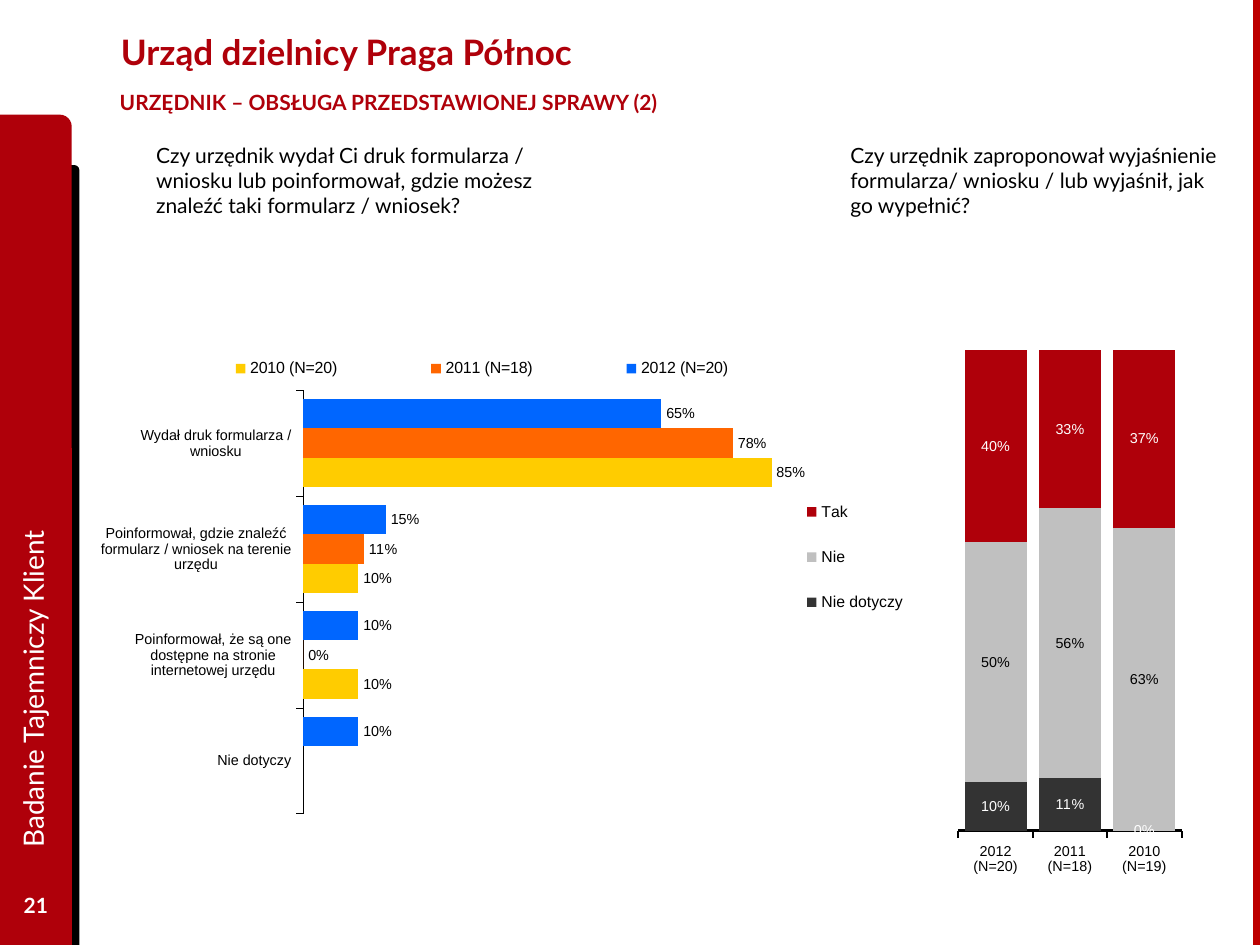
"""Build the mystery-shopper survey slide with two charts."""
from dataclasses import dataclass
from typing import Any, Optional

from lxml import etree
from pptx import Presentation
from pptx.chart import data as chart_data
from pptx.dml.color import RGBColor
from pptx.enum import chart as charts, shapes, text
from pptx.util import Pt

RED, BLACK, WHITE = "AF000A", "000000", "FFFFFF"
CHART_NS = "http://schemas.openxmlformats.org/drawingml/2006/chart"
Area = tuple[float, float, float, float]


@dataclass(frozen=True)
class Panel:
    area: Area
    fill: str
    preset: Any = shapes.MSO_SHAPE.ROUND_1_RECTANGLE


@dataclass(frozen=True)
class Label:
    words: str
    area: Area
    size: float = 12
    color: str = BLACK
    bold: bool = False
    rotation: float = 0
    anchor: Any = text.MSO_ANCHOR.TOP
    align: Any = text.PP_ALIGN.LEFT
    side_inset: float = 7.2
    wrap: bool = True


@dataclass(frozen=True)
class Series:
    name: str
    values: tuple[Optional[float], ...]
    fill: str
    label_color: str = BLACK


@dataclass(frozen=True)
class SurveyChart:
    kind: Any
    area: Area
    categories: tuple[str, ...]
    series: tuple[Series, ...]
    size: float
    legend_size: float
    legend_side: Any
    legend_area: Area
    plot_area: Area
    gap: int
    axis_width: float
    label_position: Any
    reverse: bool = False


PANELS = (
    Panel((28.08, 94.32, 17.28, 445.68), BLACK),
    Panel((0, 65.52, 41.04, 474.48), RED),
    Panel((716, 0, 4, 540), "BD0000", shapes.MSO_SHAPE.RECTANGLE),
)
TITLE = Label("Urząd dzielnicy Praga Północ", (61.92, 3.6, 559.44, 51.84), 20, RED, True,
              anchor=text.MSO_ANCHOR.MIDDLE)
LABELS = (
    Label("Badanie Tajemniczy Klient", (-188.64, 265.68, 414.72, 36.72), 16, WHITE,
          rotation=270, anchor=text.MSO_ANCHOR.MIDDLE),
    Label("21", (0, 502.56, 41.04, 28.8), 12, WHITE, True,
          anchor=text.MSO_ANCHOR.MIDDLE, align=text.PP_ALIGN.CENTER),
    Label("URZĘDNIK – OBSŁUGA PRZEDSTAWIONEJ SPRAWY (2)", (54, 47.52, 277.2, 23.76),
          12, RED, True, side_inset=14.4, wrap=False),
    Label("Czy urzędnik zaproponował wyjaśnienie formularza/ wniosku / lub wyjaśnił, "
          "jak go wypełnić?", (478.8, 77.76, 226.8, 51.12)),
    Label("Czy urzędnik wydał Ci druk formularza / wniosku lub poinformował, gdzie możesz "
          "znaleźć taki formularz / wniosek?", (82.08, 77.76, 265.68, 51.12)),
)
CHARTS = (
    SurveyChart(
        charts.XL_CHART_TYPE.COLUMN_STACKED_100, (445.68, 179.28, 231.84, 343.44),
        ("2012 (N=20)", "2011 (N=18)", "2010 (N=19)"),
        (Series("Nie dotyczy", (0.1, 0.11, 0), "333333", WHITE),
         Series("Nie", (0.5, 0.56, 0.63), "C0C0C0"),
         Series("Tak", (0.4, 0.33, 0.37), RED, WHITE)),
        8.2, 9, charts.XL_LEGEND_POSITION.LEFT, (0.05, 0.27, 0.27, 0.27),
        (0.44, 0.06, 0.55, 0.8), 20, 1.17, charts.XL_LABEL_POSITION.CENTER),
    SurveyChart(
        charts.XL_CHART_TYPE.BAR_CLUSTERED, (57.6, 192.96, 430.56, 272.16),
        ("Wydał druk formularza / wniosku",
         "Poinformował, gdzie znaleźć formularz / wniosek na terenie urzędu",
         "Poinformował, że są one dostępne na stronie internetowej urzędu",
         "Nie dotyczy"),
        (Series("2012 (N=20)", (0.65, 0.15, 0.1, 0.1), "0066FF"),
         Series("2011 (N=18)", (0.78, 0.11, 0, None), "FF6600"),
         Series("2010 (N=20)", (0.85, 0.1, 0.1, None), "FFCC00")),
        8.3, 9.2, charts.XL_LEGEND_POSITION.RIGHT, (0.05, 0.03, 0.9, 0.07),
        (0.26, 0.11, 0.74, 0.89), 60, 0.25, charts.XL_LABEL_POSITION.OUTSIDE_END, True),
)


def rgb(color: str) -> RGBColor:
    """Turn a hex string into a colour."""
    return RGBColor.from_string(color)


def points(area: Area) -> list[Pt]:
    """Turn a left, top, width, height area into lengths."""
    return [Pt(value) for value in area]


def style_font(font: Any, name: str, size: float, color: str, bold: bool = False) -> None:
    """Set face, size, colour and weight of a font."""
    font.name, font.size, font.bold = name, Pt(size), bold
    font.color.rgb = rgb(color)


def draw_panel(page: Any, panel: Panel) -> None:
    """Draw one plain filled panel."""
    shape = page.shapes.add_shape(panel.preset, *points(panel.area))
    shape.shadow.inherit = False
    shape.fill.solid()
    shape.fill.fore_color.rgb = rgb(panel.fill)
    shape.line.fill.background()


def write_label(box: Any, label: Label) -> None:
    """Place and fill a text shape."""
    box.left, box.top, box.width, box.height = points(label.area)
    box.rotation = label.rotation
    frame = box.text_frame
    frame.word_wrap = label.wrap
    frame.auto_size = text.MSO_AUTO_SIZE.NONE
    frame.vertical_anchor = label.anchor
    frame.margin_left = frame.margin_right = Pt(label.side_inset)
    para = frame.paragraphs[0]
    para.alignment = label.align
    span = para.add_run()
    span.text = label.words
    style_font(span.font, "Lato", label.size, label.color, label.bold)


def set_layout(parent: Any, index: int, area: Area, inner: bool = False) -> None:
    """Give a chart part a manual layout in fractions of the chart."""
    for old in parent.findall(f"{{{CHART_NS}}}layout"):
        parent.remove(old)
    layout = etree.Element(f"{{{CHART_NS}}}layout")
    manual = etree.SubElement(layout, f"{{{CHART_NS}}}manualLayout")
    settings = [("layoutTarget", "inner")] if inner else []
    settings += [("xMode", "edge"), ("yMode", "edge"), *zip("xywh", map(str, area))]
    for tag, value in settings:
        etree.SubElement(manual, f"{{{CHART_NS}}}{tag}", val=value)
    parent.insert(index, layout)


def draw_chart(page: Any, survey: SurveyChart) -> None:
    """Draw one survey chart with its legend and labels."""
    source = chart_data.CategoryChartData(number_format="0%")
    source.categories = survey.categories
    for item in survey.series:
        source.add_series(item.name, item.values)
    chart = page.shapes.add_chart(survey.kind, *points(survey.area), source).chart
    chart.has_title = False
    style_font(chart.font, "Arial", survey.size, BLACK)
    chart.has_legend = True
    legend = chart.legend
    legend.position = survey.legend_side
    legend.include_in_layout = False
    style_font(legend.font, "Arial", survey.legend_size, BLACK)
    set_layout(legend._element, 1, survey.legend_area)
    set_layout(chart._chartSpace.chart.plotArea, 0, survey.plot_area, True)
    axis = chart.category_axis
    axis.reverse_order = survey.reverse
    axis.major_tick_mark = charts.XL_TICK_MARK.OUTSIDE
    axis.format.line.color.rgb = rgb(BLACK)
    axis.format.line.width = Pt(survey.axis_width)
    style_font(axis.tick_labels.font, "Arial", survey.size, BLACK)
    scale = chart.value_axis
    scale.visible = scale.has_major_gridlines = False
    scale.minimum_scale, scale.maximum_scale, scale.major_unit = 0, 1, 0.2
    plot = chart.plots[0]
    plot.gap_width = survey.gap
    plot.vary_by_categories = False
    for series, item in zip(plot.series, survey.series):
        series.format.fill.solid()
        series.format.fill.fore_color.rgb = rgb(item.fill)
        labels = series.data_labels
        labels.show_value = True
        labels.number_format, labels.number_format_is_linked = "0%", False
        labels.position = survey.label_position
        style_font(labels.font, "Arial", survey.size, item.label_color)


def main() -> None:
    """Assemble and save the deck."""
    deck = Presentation()
    deck.slide_width, deck.slide_height = Pt(720), Pt(540)
    page = deck.slides.add_slide(deck.slide_layouts[5])
    for panel in PANELS:
        draw_panel(page, panel)
    write_label(page.shapes.title, TITLE)
    for label in LABELS:
        write_label(page.shapes.add_textbox(0, 0, 0, 0), label)
    for survey in CHARTS:
        draw_chart(page, survey)
    deck.save("out.pptx")


if __name__ == "__main__":
    main()
